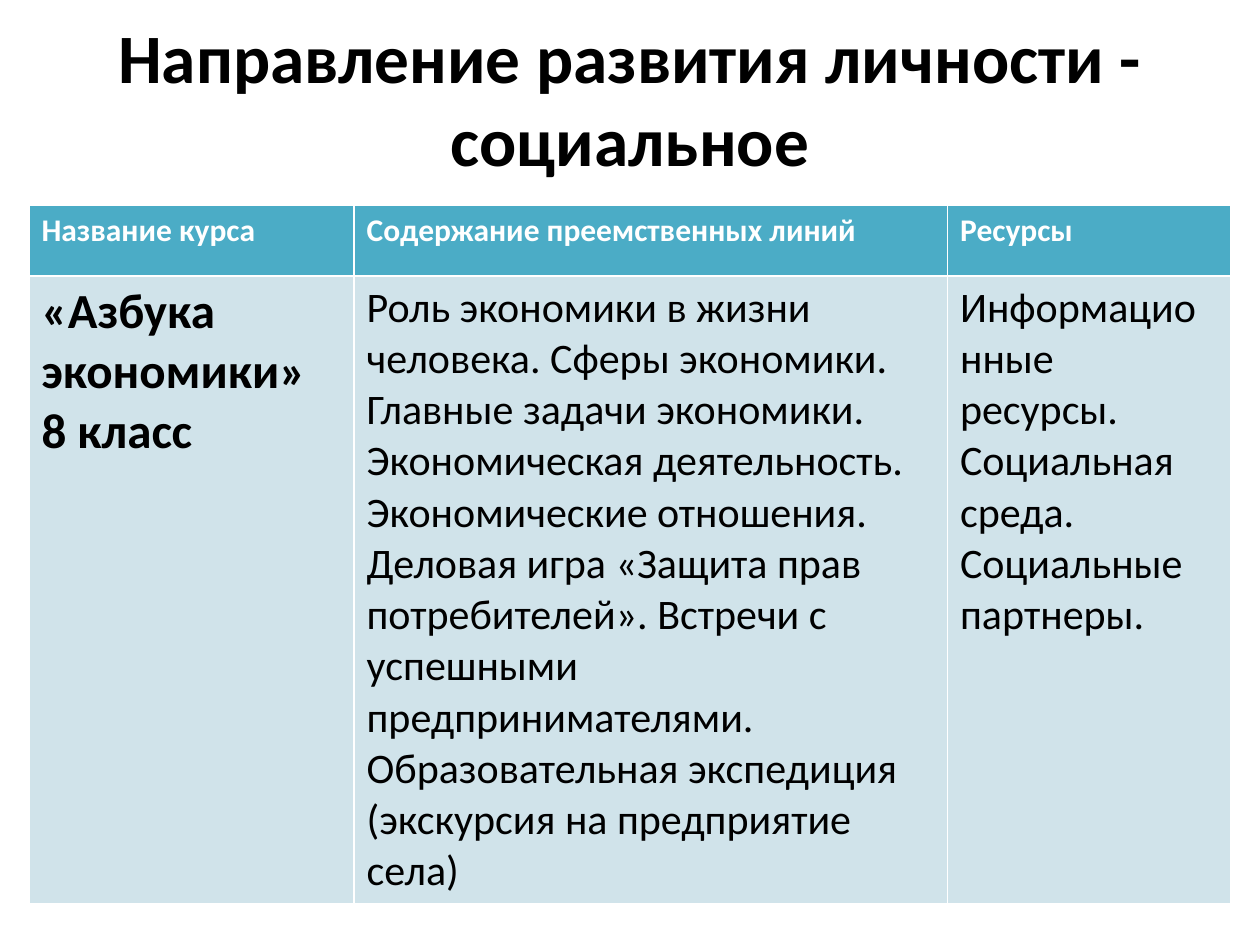
from pptx import Presentation
from pptx.dml.color import RGBColor
from pptx.enum.text import MSO_ANCHOR, MSO_AUTO_SIZE, PP_ALIGN
from pptx.util import Inches, Pt

BLACK = RGBColor(0x00, 0x00, 0x00)
WHITE = RGBColor(0xFF, 0xFF, 0xFF)
TEAL = RGBColor(0x4B, 0xAC, 0xC6)
PALE = RGBColor(0xD0, 0xE3, 0xEA)

HEADER = ["Название курса", "Содержание преемственных линий", "Ресурсы"]
COURSE = [
    "«Азбука экономики»\n8 класс",
    "Роль экономики в жизни человека. Сферы экономики. Главные задачи "
    "экономики. Экономическая деятельность. Экономические отношения. "
    "Деловая игра «Защита прав потребителей». Встречи с успешными "
    "предпринимателями.\n"
    "Образовательная экспедиция (экскурсия на предприятие села)",
    "Информационные ресурсы.\nСоциальная среда. Социальные партнеры.",
]


class SlideBuilder:
    """Holds the font and the current slide and adds elements to it."""

    def __init__(self, slide, font="Calibri"):
        self.slide = slide
        self.font = font

    def format_text(self, tf, size, color, bold, align=PP_ALIGN.LEFT):
        for p in tf.paragraphs:
            p.alignment = align
            for r in p.runs:
                r.font.name = self.font
                r.font.size = Pt(size)
                r.font.bold = bold
                r.font.color.rgb = color

    def title(self, text, left, top, width, height, size):
        sp = self.slide.shapes.title
        sp.left, sp.top = Inches(left), Inches(top)
        sp.width, sp.height = Inches(width), Inches(height)
        tf = sp.text_frame
        tf.text = text
        tf.word_wrap = True
        tf.auto_size = MSO_AUTO_SIZE.NONE
        tf.vertical_anchor = MSO_ANCHOR.MIDDLE
        self.format_text(tf, size, BLACK, True, PP_ALIGN.CENTER)

    def cell(self, cell, text, fill, size, color, bold):
        cell.fill.solid()
        cell.fill.fore_color.rgb = fill
        cell.text_frame.text = text
        self.format_text(cell.text_frame, size, color, bold)

    def table(self, left, top, widths, heights):
        table = self.slide.shapes.add_table(
            len(heights), len(widths), Inches(left), Inches(top),
            Inches(sum(widths)), Inches(sum(heights))).table
        for column, width in zip(table.columns, widths):
            column.width = Inches(width)
        for row, height in zip(table.rows, heights):
            row.height = Inches(height)
        return table


def main():
    prs = Presentation()
    prs.slide_width, prs.slide_height = Inches(10), Inches(7.5)
    s = SlideBuilder(prs.slides.add_slide(prs.slide_layouts[5]))
    s.title("Направление развития личности - социальное",
            0.5, 0.3, 9, 0.95, 39.6)

    table = s.table(0.23, 1.63, [2.58, 4.71, 2.25], [0.56, 4.9])
    for col, (heading, content) in enumerate(zip(HEADER, COURSE)):
        is_name = col == 0
        s.cell(table.cell(0, col), heading, TEAL, 18, WHITE, True)
        s.cell(table.cell(1, col), content, PALE,
               28 if is_name else 24, BLACK, is_name)
    prs.save("out.pptx")


if __name__ == "__main__":
    main()
